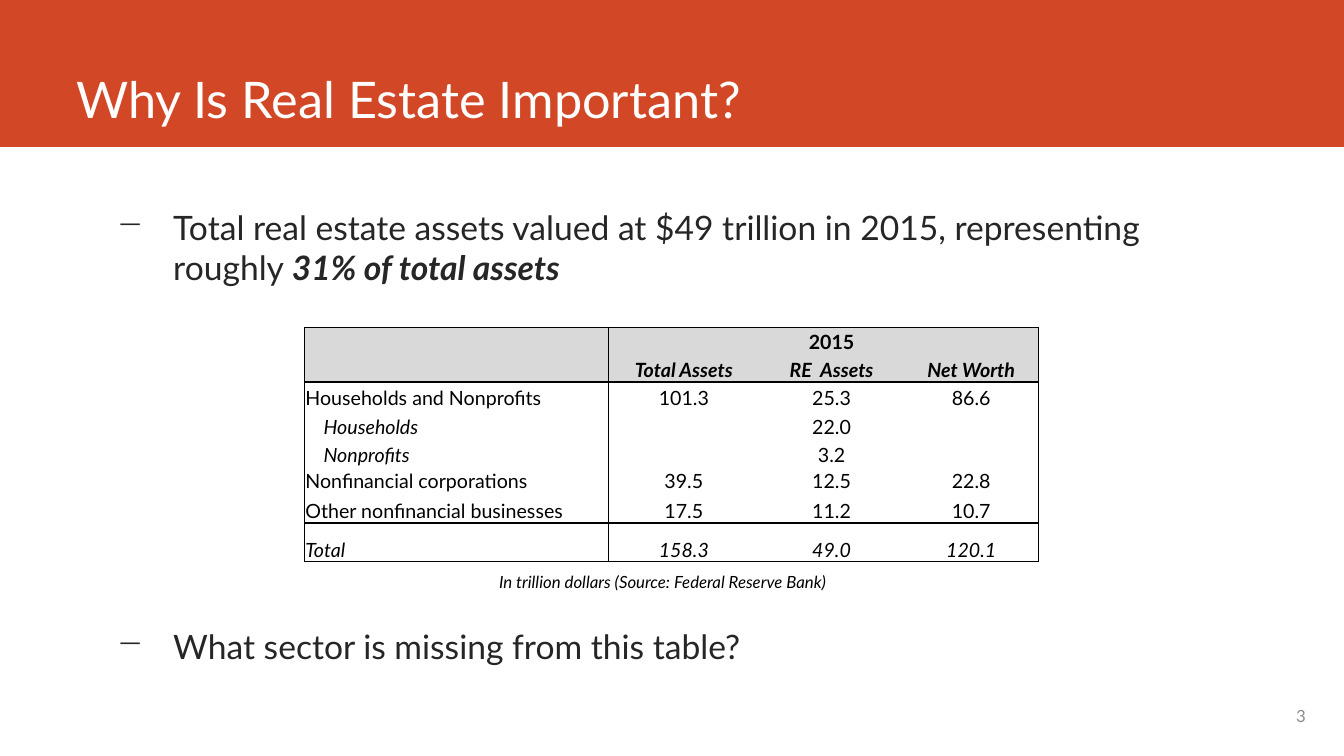
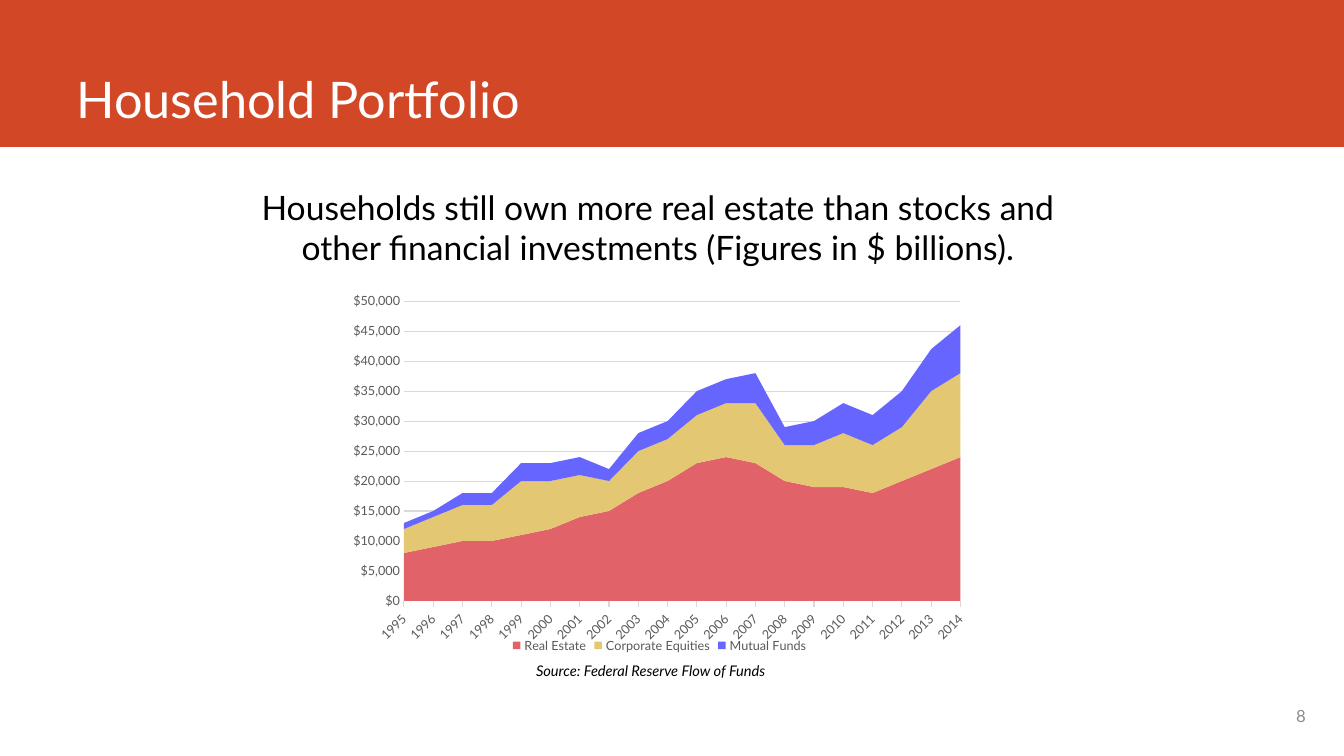
"""Builds two slides on real estate: a table of asset values and a chart of household portfolios."""
from dataclasses import dataclass

from lxml import etree
from pptx import Presentation
from pptx.chart.data import CategoryChartData
from pptx.dml.color import RGBColor
from pptx.enum.chart import XL_CHART_TYPE, XL_LEGEND_POSITION, XL_TICK_MARK
from pptx.enum.shapes import MSO_SHAPE
from pptx.enum.text import MSO_ANCHOR, MSO_AUTO_SIZE, PP_ALIGN
from pptx.oxml.ns import qn
from pptx.util import Inches, Pt

RECTANGLE = MSO_SHAPE.RECTANGLE
TOP, MIDDLE, BOTTOM = MSO_ANCHOR.TOP, MSO_ANCHOR.MIDDLE, MSO_ANCHOR.BOTTOM
LEFT, CENTER, RIGHT = PP_ALIGN.LEFT, PP_ALIGN.CENTER, PP_ALIGN.RIGHT
FIT_SHAPE = MSO_AUTO_SIZE.SHAPE_TO_FIT_TEXT
STACKED_AREA = XL_CHART_TYPE.AREA_STACKED
LEGEND_BELOW = XL_LEGEND_POSITION.BOTTOM
TICK_OUT, TICK_NONE = XL_TICK_MARK.OUTSIDE, XL_TICK_MARK.NONE


@dataclass(frozen=True)
class Theme:
    font: str = "Lato"
    band: RGBColor = RGBColor(0xD2, 0x47, 0x26)
    white: RGBColor = RGBColor(0xFF, 0xFF, 0xFF)
    black: RGBColor = RGBColor(0, 0, 0)
    body: RGBColor = RGBColor(0x26, 0x26, 0x26)
    axis: RGBColor = RGBColor(0x59, 0x59, 0x59)
    page: RGBColor = RGBColor(0x8C, 0x8C, 0x8C)
    pale: RGBColor = RGBColor(0xD9, 0xD9, 0xD9)
    real_estate: RGBColor = RGBColor(0xE1, 0x63, 0x69)
    equities: RGBColor = RGBColor(0xE4, 0xC7, 0x72)
    funds: RGBColor = RGBColor(0x66, 0x66, 0xFF)
    title_size: float = 36
    body_size: float = 24
    table_size: float = 14
    note_size: float = 12
    source_size: float = 10.5
    chart_size: float = 10
    axis_size: float = 9


theme = Theme()
deck = Presentation()
deck.slide_width, deck.slide_height = Inches(13.33), Inches(7.5)
COL, ROW = deck.slide_width / 100, deck.slide_height / 100


def area(left, top, width, height):
    """Turn percentages of the slide into a position and a size."""
    return int(left * COL), int(top * ROW), int(width * COL), int(height * ROW)


def write(frame, text, size, color, align=LEFT, anchor=TOP, bold=False, italic=False):
    """Put one styled paragraph in a text frame and return it."""
    frame.word_wrap = True
    frame.vertical_anchor = anchor
    paragraph = frame.paragraphs[0]
    if text:
        paragraph.add_run().text = text
    paragraph.alignment = align
    font = paragraph.font
    font.name, font.size, font.bold, font.italic = theme.font, Pt(size), bold, italic
    font.color.rgb = color
    return paragraph


slides = []
for title, page in (("Why Is Real Estate Important?", "3"), ("Household Portfolio", "8")):
    slide = deck.slides.add_slide(deck.slide_layouts[6])
    band = slide.shapes.add_shape(RECTANGLE, *area(0, 0, 100, 19.45))
    band.shadow.inherit = False
    band.fill.solid()
    band.fill.fore_color.rgb = theme.band
    band.line.fill.background()
    heading = slide.shapes.add_textbox(*area(4.95, 0, 88.2, 17.6))
    write(heading.text_frame, title, theme.title_size, theme.white, anchor=BOTTOM)
    page_number = slide.shapes.add_textbox(*area(71.05, 92, 26.85, 5.33))
    write(page_number.text_frame, page, theme.note_size, theme.page, RIGHT, MIDDLE)
    slides.append(slide)
importance, portfolio = slides

HEADER_ROWS, SUB_ROWS, TOTAL_ROW = (0, 1), (3, 4), 7
COLUMN_SHARES = (22.65, 11.18, 10.8, 9.98)
ROW_SHARES = (3.47, 3.73, 3.73, 3.73, 3.73, 3.47, 4, 5.07)
assets = (
    ("", "", "2015", ""),
    ("", "Total Assets", "RE  Assets", "Net Worth"),
    ("Households and Nonprofits", "101.3", "25.3", "86.6"),
    ("Households", "", "22.0", ""),
    ("Nonprofits", "", "3.2", ""),
    ("Nonfinancial corporations", "39.5", "12.5", "22.8"),
    ("Other nonfinancial businesses", "17.5", "11.2", "10.7"),
    ("Total", "158.3", "49.0", "120.1"),
)
table = importance.shapes.add_table(
    len(ROW_SHARES), len(COLUMN_SHARES),
    *area(22.65, 43.33, sum(COLUMN_SHARES), sum(ROW_SHARES))).table
table.first_row = table.horz_banding = False
for column, share in zip(table.columns, COLUMN_SHARES):
    column.width = int(share * COL)
for r, (row, share) in enumerate(zip(table.rows, ROW_SHARES)):
    row.height = int(share * ROW)
    for c, cell in enumerate(row.cells):
        sub_label = r in SUB_ROWS and c == 0
        write(cell.text_frame, assets[r][c], theme.table_size, theme.black,
              CENTER if c else LEFT, bold=r in HEADER_ROWS,
              italic=r in (1, TOTAL_ROW) or sub_label)
        cell.vertical_anchor = BOTTOM
        cell.margin_left = Inches(0.19 if sub_label else 0.01)
        cell.margin_right = cell.margin_top = Inches(0.01)
        cell.margin_bottom = 0
        borders = {"a:lnL": c in (0, 1), "a:lnR": c in (0, 3),
                   "a:lnT": r in (0, 2, TOTAL_ROW), "a:lnB": r in (1, 6, TOTAL_ROW)}
        properties = cell._tc.get_or_add_tcPr()
        for side, drawn in borders.items():
            border = etree.SubElement(properties, qn(side), w=str(Pt(1)))
            if drawn:
                ink = etree.SubElement(border, qn("a:solidFill"))
                etree.SubElement(ink, qn("a:srgbClr"), val=str(theme.black))
            else:
                etree.SubElement(border, qn("a:noFill"))
        if r in HEADER_ROWS:
            cell.fill.solid()
            cell.fill.fore_color.rgb = theme.pale
        else:
            cell.fill.background()

points = (
    (26.67, "Total real estate assets valued at $49 trillion in 2015, representing roughly ",
     "31% of total assets"),
    (82.13, "What sector is missing from this table?", ""),
)
for top, statement, emphasis in points:
    point = importance.shapes.add_textbox(*area(6.9, top, 86.25, 13.73))
    paragraph = write(point.text_frame, statement, theme.body_size, theme.body)
    if emphasis:
        run = paragraph.add_run()
        run.text = emphasis
        run.font.bold = run.font.italic = True
    indents = paragraph._p.get_or_add_pPr()
    indents.set("marL", str(Inches(0.7)))
    indents.set("indent", str(Inches(-0.56)))
    bullet = etree.Element(qn("a:buChar"), char="−")
    indents.insert(0, bullet)
    paragraph.space_before, paragraph.space_after = Pt(18), Pt(6)

message = portfolio.shapes.add_shape(RECTANGLE, *area(18, 24, 61.9, 14.8))
message.shadow.inherit = False
message.fill.solid()
message.fill.fore_color.rgb = theme.white
message.line.color.rgb = theme.white
message.line.width = Pt(0.75)
write(message.text_frame,
      "Households still own more real estate than stocks and other financial investments "
      "(Figures in $ billions).", theme.body_size, theme.black, CENTER)

holdings = (
    ("Real Estate", theme.real_estate,
     (8000, 9000, 10000, 10000, 11000, 12000, 14000, 15000, 18000, 20000,
      23000, 24000, 23000, 20000, 19000, 19000, 18000, 20000, 22000, 24000)),
    ("Corporate Equities", theme.equities,
     (4000, 5000, 6000, 6000, 9000, 8000, 7000, 5000, 7000, 7000,
      8000, 9000, 10000, 6000, 7000, 9000, 8000, 9000, 13000, 14000)),
    ("Mutual Funds", theme.funds,
     (1000, 1000, 2000, 2000, 3000, 3000, 3000, 2000, 3000, 3000,
      4000, 4000, 5000, 3000, 4000, 5000, 5000, 6000, 7000, 8000)),
)
data = CategoryChartData()
data.categories = [str(year) for year in range(1995, 2015)]
for name, _, values in holdings:
    data.add_series(name, values)
chart = portfolio.shapes.add_chart(STACKED_AREA, *area(25, 37.73, 48.15, 49.2), data).chart
chart.has_title = False
chart.font.name, chart.font.size = theme.font, Pt(theme.chart_size)
chart.font.color.rgb = theme.black
chart.plots[0].vary_by_categories = False
for series, (_, color, _) in zip(chart.plots[0].series, holdings):
    series.format.fill.solid()
    series.format.fill.fore_color.rgb = color

years, dollars = chart.category_axis, chart.value_axis
chart.has_legend = True
chart.legend.position = LEGEND_BELOW
chart.legend.include_in_layout = False
for font in (chart.legend.font, years.tick_labels.font, dollars.tick_labels.font):
    font.name, font.size = theme.font, Pt(theme.axis_size)
    font.color.rgb = theme.axis
years.has_major_gridlines = False
years.major_tick_mark = TICK_OUT
years._element.find(qn("c:txPr")).find(qn("a:bodyPr")).set("rot", "-2700000")
dollars.minimum_scale, dollars.maximum_scale, dollars.major_unit = 0, 50000, 5000
dollars.major_tick_mark = TICK_NONE
dollars.tick_labels.number_format = '"$"#,##0'
dollars.tick_labels.number_format_is_linked = False
dollars.format.line.fill.background()
dollars.has_major_gridlines = True
for line in (years.format.line, dollars.major_gridlines.format.line):
    line.color.rgb = theme.pale
    line.width = Pt(0.75)

plot_area = chart._chartSpace.chart.plotArea
for automatic in plot_area.findall(qn("c:layout")):
    plot_area.remove(automatic)
layout = etree.Element(qn("c:layout"))
manual = etree.SubElement(layout, qn("c:manualLayout"))
placement = {"layoutTarget": "inner", "xMode": "edge", "yMode": "edge",
             "x": 10.5 / 100, "y": 4.3 / 100, "w": 86 / 100, "h": 80.6 / 100}
for key, value in placement.items():
    etree.SubElement(manual, qn(f"c:{key}"), val=str(value))
plot_area.insert(0, layout)

sources = (
    (importance, (36.4, 74.93, 27.3, 4), theme.note_size,
     "In trillion dollars (Source: Federal Reserve Bank)"),
    (portfolio, (39.15, 86.93, 19.5, 3.73), theme.source_size,
     "Source: Federal Reserve Flow of Funds"),
)
for slide, place, size, text in sources:
    source = slide.shapes.add_textbox(*area(*place))
    write(source.text_frame, text, size, theme.black, italic=True)
    source.text_frame.word_wrap = False
    source.text_frame.auto_size = FIT_SHAPE

deck.save("out.pptx")
